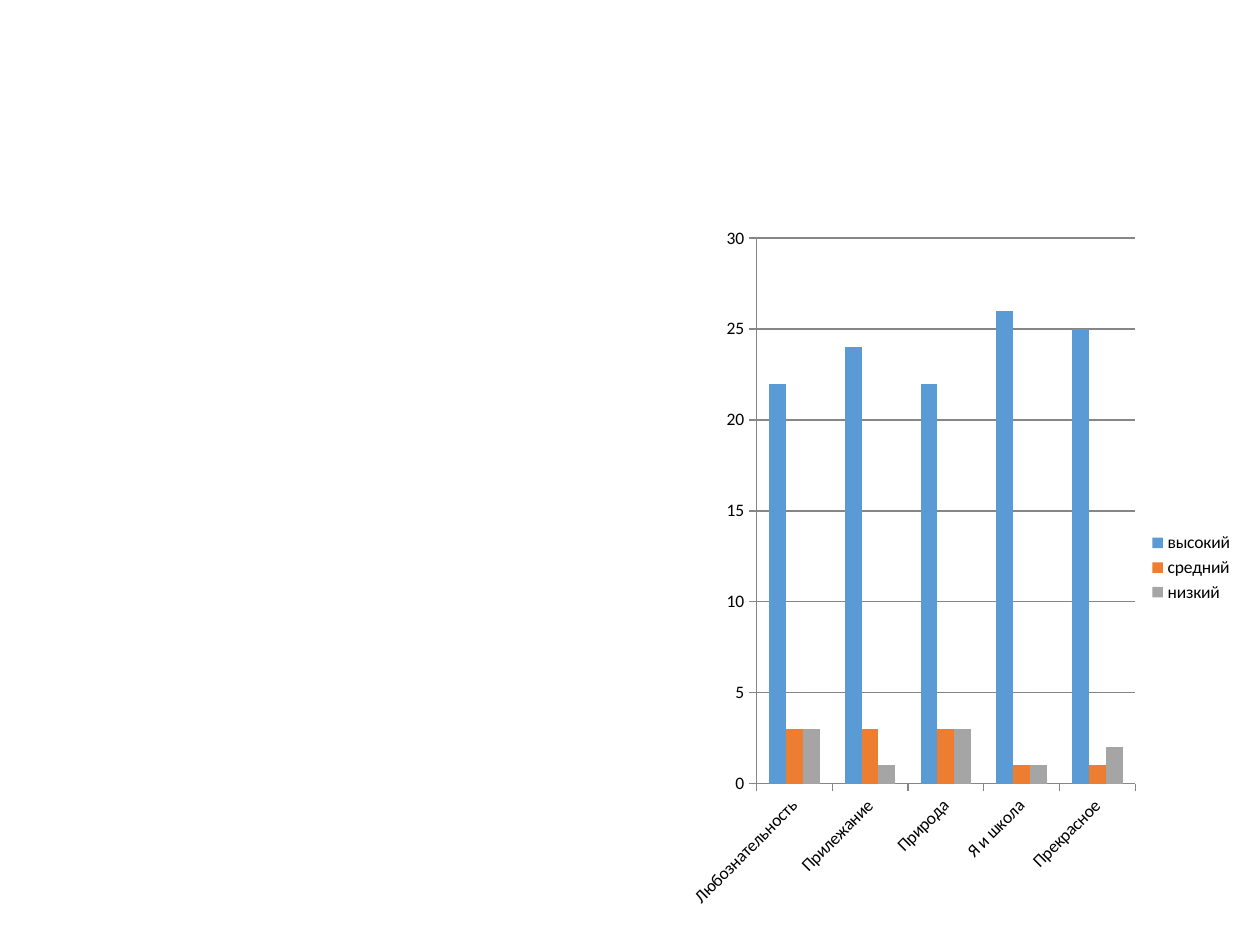
from pptx import Presentation
from pptx import util as u
from pptx.chart.data import CategoryChartData
from pptx.dml.color import RGBColor
from pptx.enum import chart as ch


def rgb(color):
    return RGBColor.from_string(color)


class Deck:
    """Hold the style and the current slide, and add elements to it."""

    font, size, ink, line = "Calibri", 10, "000000", "868686"
    palette = ("5B9BD5", "ED7D31", "A5A5A5")

    def __init__(self, width, height):
        self.prs = Presentation()
        self.prs.slide_width = u.Inches(width)
        self.prs.slide_height = u.Inches(height)
        self.s = self.prs.slides.add_slide(self.prs.slide_layouts[6])

    def outline(self, line):
        line.color.rgb = rgb(self.line)
        line.width = u.Pt(0.75)

    def column_chart(self, box, categories, series, top, step):
        data = CategoryChartData()
        data.categories = categories
        for name, values in series.items():
            data.add_series(name, values)
        chart = self.s.shapes.add_chart(
            ch.XL_CHART_TYPE.COLUMN_CLUSTERED, *map(u.Inches, box), data).chart
        chart.has_title = False
        chart.font.name = self.font
        chart.font.size = u.Pt(self.size)
        chart.font.color.rgb = rgb(self.ink)

        chart.has_legend = True
        chart.legend.position = ch.XL_LEGEND_POSITION.RIGHT
        chart.legend.include_in_layout = False

        for axis in (chart.category_axis, chart.value_axis):
            axis.major_tick_mark = ch.XL_TICK_MARK.OUTSIDE
            axis.minor_tick_mark = ch.XL_TICK_MARK.NONE
            self.outline(axis.format.line)
        value_axis = chart.value_axis
        value_axis.minimum_scale = 0
        value_axis.maximum_scale = top
        value_axis.major_unit = step
        value_axis.has_major_gridlines = True
        self.outline(value_axis.major_gridlines.format.line)

        plot = chart.plots[0]
        plot.gap_width = 150
        plot.overlap = 0
        plot.vary_by_categories = False
        for item, color in zip(plot.series, self.palette):
            item.format.fill.solid()
            item.format.fill.fore_color.rgb = rgb(color)


def main():
    deck = Deck(10, 7.5)
    deck.column_chart(
        (5.39, 1.7, 4.5, 5.61),
        ("Любознательность", "Прилежание", "Природа", "Я и школа", "Прекрасное"),
        {
            "высокий": (22, 24, 22, 26, 25),
            "средний": (3, 3, 3, 1, 1),
            "низкий": (3, 1, 3, 1, 2),
        },
        top=30, step=5)
    deck.prs.save("out.pptx")


if __name__ == "__main__":
    main()
